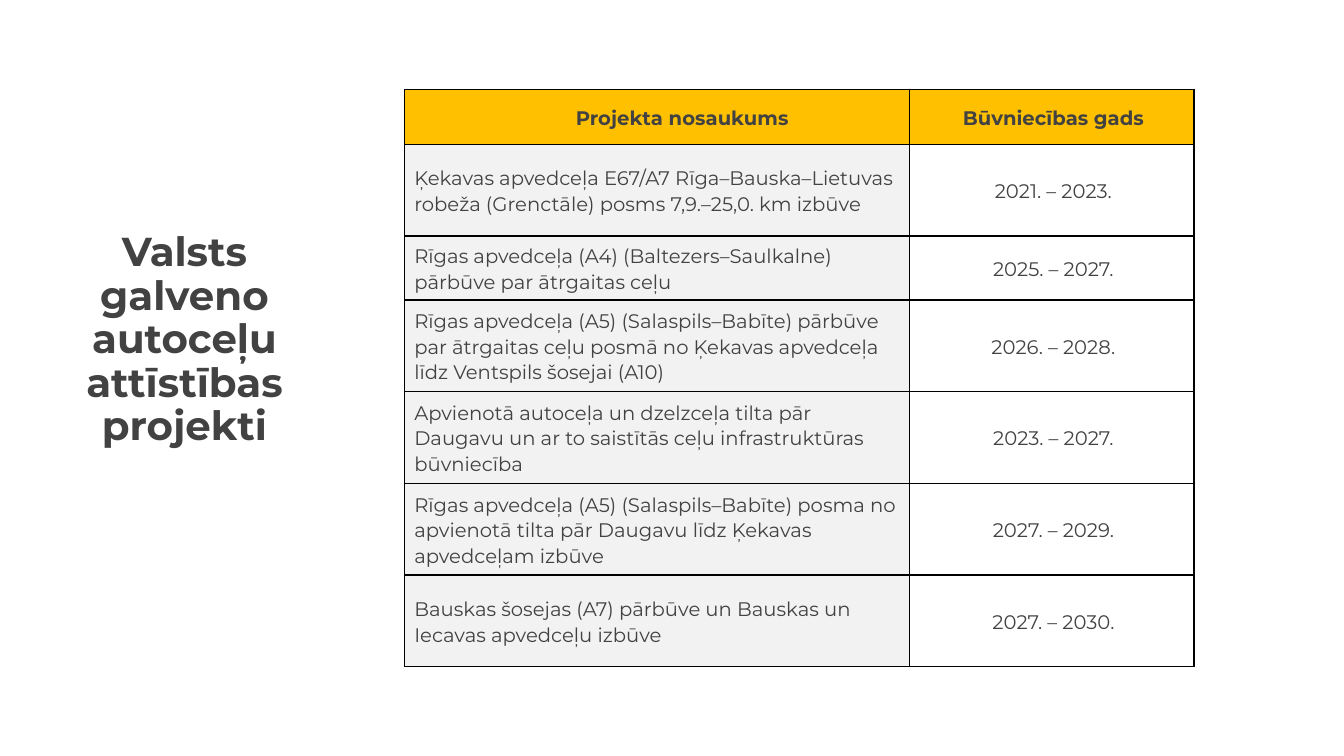
from lxml.etree import SubElement
from pptx import Presentation
from pptx.dml.color import RGBColor
from pptx.enum.text import MSO_ANCHOR, MSO_AUTO_SIZE, PP_ALIGN
from pptx.oxml.ns import qn
from pptx.util import Cm, Pt

FONT = "Montserrat"
COLORS = {
    "text": "424242",
    "header": "FFC000",
    "name": "F2F2F2",
    "year": "FFFFFF",
    "border": "000000",
}
HEADER = ("Projekta nosaukums", "Būvniecības gads")
# Project name, construction years, row height in cm
PROJECTS = [
    ("Ķekavas apvedceļa E67/A7 Rīga–Bauska–Lietuvas robeža (Grenctāle) "
     "posms 7,9.–25,0. km izbūve", "2021. – 2023.", 2.31),
    ("Rīgas apvedceļa (A4) (Baltezers–Saulkalne) pārbūve par ātrgaitas ceļu",
     "2025. – 2027.", 1.61),
    ("Rīgas apvedceļa (A5) (Salaspils–Babīte) pārbūve par ātrgaitas ceļu posmā "
     "no Ķekavas apvedceļa līdz Ventspils šosejai (A10)", "2026. – 2028.", 2.31),
    ("Apvienotā autoceļa un dzelzceļa tilta pār Daugavu un ar to saistītās "
     "ceļu infrastruktūras būvniecība", "2023. – 2027.", 2.31),
    ("Rīgas apvedceļa (A5) (Salaspils–Babīte) posma no apvienotā tilta pār "
     "Daugavu līdz Ķekavas apvedceļam izbūve", "2027. – 2029.", 2.31),
    ("Bauskas šosejas (A7) pārbūve un Bauskas un Iecavas apvedceļu izbūve",
     "2027. – 2030.", 2.31),
]
HEADER_HEIGHT = 1.39
NAME_SHARE = 0.64


def format_paragraph(p, size, bold, align, spacing):
    p.alignment = align
    p.line_spacing = spacing
    p.font.name = FONT
    p.font.size = Pt(size)
    p.font.bold = bold
    p.font.color.rgb = RGBColor.from_string(COLORS["text"])


def add_title(slide, left, top, width, height):
    sp = slide.shapes.title
    sp.left, sp.top, sp.width, sp.height = map(Cm, (left, top, width, height))
    tf = sp.text_frame
    tf.word_wrap = True
    tf.auto_size = MSO_AUTO_SIZE.NONE
    tf.vertical_anchor = MSO_ANCHOR.MIDDLE
    p = tf.paragraphs[0]
    p.text = "Valsts\vgalveno autoceļu attīstības projekti"
    format_paragraph(p, 28.8, True, PP_ALIGN.CENTER, 0.9)


def add_borders(cell):
    tc_pr = cell._tc.get_or_add_tcPr()
    for side in ("lnL", "lnR", "lnT", "lnB"):
        ln = SubElement(tc_pr, qn(f"a:{side}"), w=str(Pt(1)))
        fill = SubElement(ln, qn("a:solidFill"))
        SubElement(fill, qn("a:srgbClr"), val=COLORS["border"])


def fill_cell(cell, text, color, margins, bold, align):
    add_borders(cell)
    cell.fill.solid()
    cell.fill.fore_color.rgb = RGBColor.from_string(COLORS[color])
    cell.vertical_anchor = MSO_ANCHOR.MIDDLE
    cell.margin_left, cell.margin_right = map(Cm, margins)
    cell.margin_top, cell.margin_bottom = Cm(0.03), 0
    p = cell.text_frame.paragraphs[0]
    p.text = text
    format_paragraph(p, 14, bold, align, 1.07)
    p.space_after = Pt(8)


def add_projects_table(slide, left, top, width):
    heights = [HEADER_HEIGHT] + [height for _, _, height in PROJECTS]
    table = slide.shapes.add_table(
        len(heights), 2, Cm(left), Cm(top), Cm(width), Cm(sum(heights))).table
    table.first_row = table.horz_banding = False
    table.columns[0].width = Cm(width * NAME_SHARE)
    table.columns[1].width = Cm(width * (1 - NAME_SHARE))
    for row, height in zip(table.rows, heights):
        row.height = Cm(height)

    year_margins = (1.27, 1.19)
    for col, margins in enumerate([(1.52, 0.25), year_margins]):
        fill_cell(table.cell(0, col), HEADER[col], "header", margins,
                  True, PP_ALIGN.CENTER)
    for i, (name, years, _) in enumerate(PROJECTS, 1):
        fill_cell(table.cell(i, 0), name, "name", (0.25, 0.25),
                  False, PP_ALIGN.LEFT)
        fill_cell(table.cell(i, 1), years, "year", year_margins,
                  False, PP_ALIGN.CENTER)


def main():
    prs = Presentation()
    prs.slide_width, prs.slide_height = Cm(33.87), Cm(19.05)
    slide = prs.slides.add_slide(prs.slide_layouts[5])
    add_title(slide, 0.61, 6.17, 8.08, 4.83)
    add_projects_table(slide, 10.19, 2.25, 19.9)
    prs.save("out.pptx")


if __name__ == "__main__":
    main()
